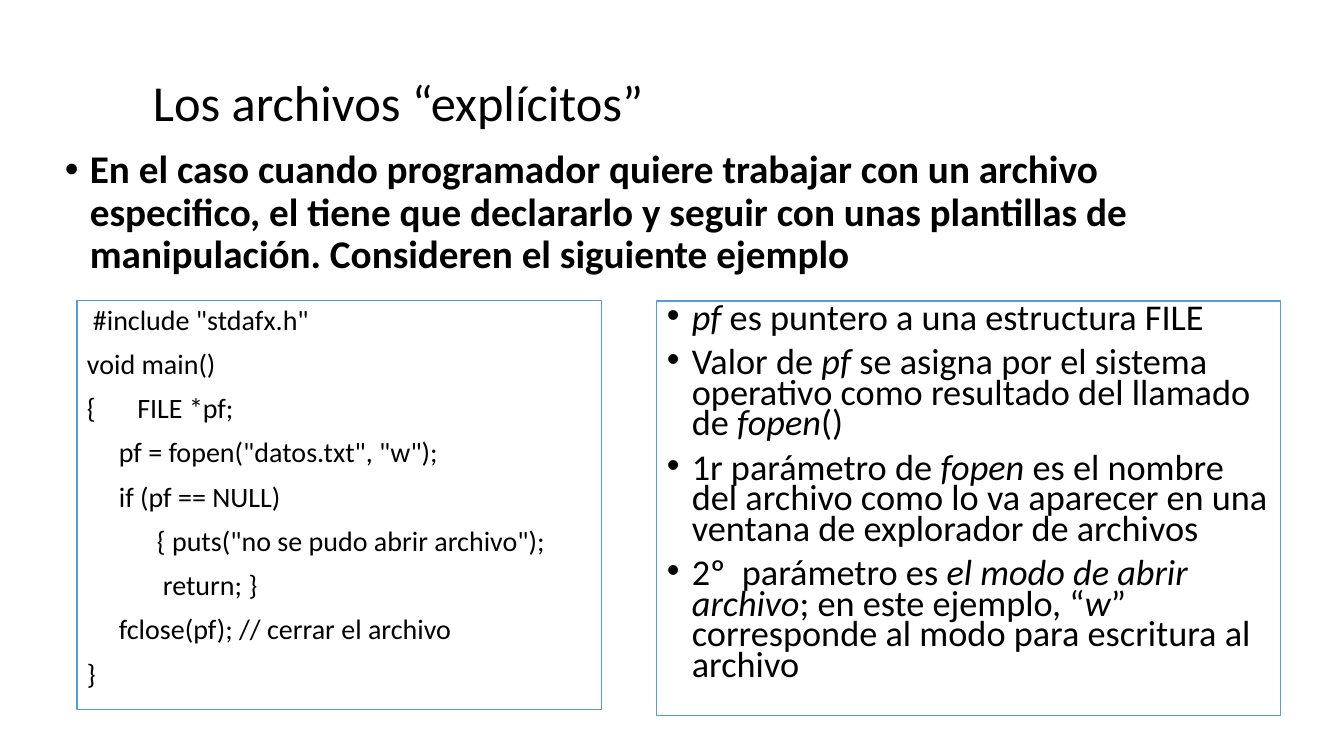
from lxml import etree
from pptx import Presentation
from pptx.dml.color import RGBColor
from pptx.enum.shapes import MSO_SHAPE
from pptx.enum.text import MSO_ANCHOR, PP_ALIGN
from pptx.oxml.ns import qn
from pptx.util import Pt

PX = 914400 / 100.8
RECT = MSO_SHAPE.RECTANGLE
TOP, MIDDLE = MSO_ANCHOR.TOP, MSO_ANCHOR.MIDDLE
LEFT = PP_ALIGN.LEFT
BLACK = RGBColor(0x00, 0x00, 0x00)
BLUE = RGBColor(0x5B, 0x9B, 0xD5)
BULLET_INDENT = 25

TITLE = "Los archivos “explícitos”"
INTRO = ("En el caso cuando programador quiere trabajar con un archivo especifico, "
         "el tiene que declararlo y seguir con unas plantillas de manipulación. "
         "Consideren el siguiente ejemplo")
# Each line of code with its indent in px
CODE = [
    (6, '#include "stdafx.h"'),
    (0, "void main()"),
    (0, "{\tFILE *pf;"),
    (32, 'pf = fopen("datos.txt", "w");'),
    (32, "if (pf == NULL)"),
    (70, '{ puts("no se pudo abrir archivo");'),
    (76, "return; }"),
    (32, "fclose(pf); // cerrar el archivo"),
    (0, "}"),
]
# Underscores enclose italics
NOTES = [
    "_pf_ es puntero a una estructura FILE",
    "Valor de _pf_ se asigna por el sistema operativo como resultado del llamado de _fopen_()",
    "1r parámetro de _fopen_ es el nombre del archivo como lo va aparecer en una "
    "ventana de explorador de archivos",
    "2º  parámetro es _el modo de abrir archivo_; en este ejemplo, “_w_” "
    "corresponde al modo para escritura al archivo",
]


def px(n):
    return round(n * PX)


def set_attrs(obj, values):
    for name, value in values.items():
        setattr(obj, name, value)


def prepare(sp, anchor=TOP):
    tf = sp.text_frame
    set_attrs(tf, {"word_wrap": True, "vertical_anchor": anchor})
    return tf


def add_frame(s, box):
    """Add an outlined rectangle and return its text frame."""
    sp = s.shapes.add_shape(RECT, *map(px, box))
    sp.shadow.inherit = False
    sp.fill.background()
    set_attrs(sp.line, {"width": Pt(0.75)})
    sp.line.color.rgb = BLUE
    return prepare(sp)


def add_text_box(s, box, anchor=TOP):
    return prepare(s.shapes.add_textbox(*map(px, box)), anchor)


def add_paragraph(tf, text, size, spacing=0.9, before=10, bold=False):
    """Append a paragraph whose underscored parts are italic."""
    p = tf.paragraphs[0] if not tf.text else tf.add_paragraph()
    set_attrs(p, {"alignment": LEFT, "line_spacing": spacing, "space_before": Pt(before)})
    for i, part in enumerate(text.split("_")):
        if part:
            r = p.add_run()
            r.text = part
            set_attrs(r.font, {"name": "Calibri", "size": Pt(size),
                               "bold": bold, "italic": i % 2 == 1})
            r.font.color.rgb = BLACK
    return p


def set_bullet(p):
    pPr = p._p.get_or_add_pPr()
    pPr.set("marL", str(px(BULLET_INDENT)))
    pPr.set("indent", str(-px(BULLET_INDENT)))
    etree.SubElement(pPr, qn("a:buFont")).set("typeface", "Arial")
    etree.SubElement(pPr, qn("a:buChar")).set("char", "•")


def set_code_indent(p, indent):
    pPr = p._p.get_or_add_pPr()
    pPr.set("marL", str(px(indent)))
    pPr.set("indent", "0")
    tabs = etree.SubElement(pPr, qn("a:tabLst"))
    tab = etree.SubElement(tabs, qn("a:tab"))
    tab.set("pos", str(px(34)))
    tab.set("algn", "l")


def add_title(s, box):
    add_paragraph(add_text_box(s, box, MIDDLE), TITLE, 36, before=0)


def add_intro(s, box):
    set_bullet(add_paragraph(add_text_box(s, box), INTRO, 28, bold=True))


def add_code(s, box):
    tf = add_frame(s, box)
    for indent, line in CODE:
        set_code_indent(add_paragraph(tf, line, 20), indent)


def add_notes(s, box):
    tf = add_frame(s, box)
    for note in NOTES:
        set_bullet(add_paragraph(tf, note, 25.9, spacing=0.7))


def main():
    prs = Presentation()
    set_attrs(prs, {"slide_width": px(1344), "slide_height": px(756)})
    s = prs.slides.add_slide(prs.slide_layouts[6])
    add_title(s, (143, 22, 1155, 166))
    add_intro(s, (55, 145, 1203, 571))
    add_code(s, (77, 301, 525, 409))
    add_notes(s, (657, 301, 624, 415))
    prs.save("out.pptx")


if __name__ == "__main__":
    main()
